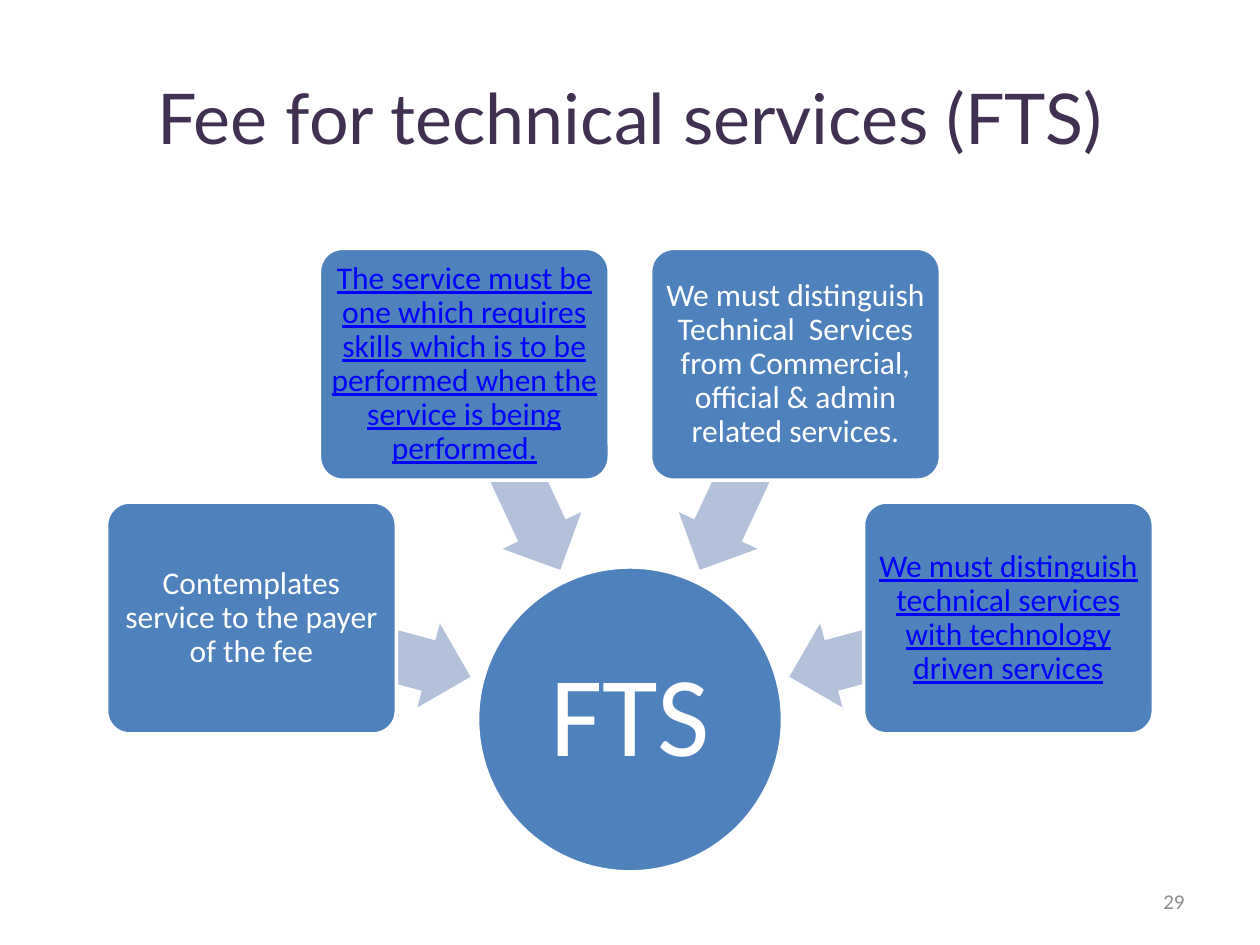
from math import cos, radians, sin

from pptx import Presentation
from pptx.dml.color import RGBColor
from pptx.enum.shapes import MSO_SHAPE as Shape
from pptx.enum.text import MSO_ANCHOR as Anchor, PP_ALIGN as Align
from pptx.util import Inches, Pt

TITLE = "Fee for technical services (FTS)"
HUB = "FTS"
PAGE = "29"
# Text, underlined as a reference
CARDS = [
    ("Contemplates service to the payer of the fee", False),
    ("The service must be one which requires skills which is to be performed "
     "when the service is being performed.", True),
    ("We must distinguish Technical  Services from Commercial, official & admin "
     "related services.", False),
    ("We must distinguish technical services with technology driven services", True),
]
COLORS = {"title": "403152", "blue": "4F81BD", "arrow": "B3C1DB",
          "white": "FFFFFF", "ref": "0000FF", "page": "8C8C8C"}

# Radial layout, in inches and degrees
MID = (5, 5.71)
START, STEP = 195, 50
CARD_R, ARROW_R = 3.11, 2.21
HUB_SIZE, CARD_SIZE, ARROW_SIZE = (2.42, 2.42), (2.3, 1.84), (1.8, 0.69)


def color(key):
    return RGBColor.from_string(COLORS[key])


def write(shape, text, size, key, font="Calibri", align=Align.CENTER, inset=None):
    frame = shape.text_frame
    frame.word_wrap = True
    frame.vertical_anchor = Anchor.MIDDLE
    if inset is not None:
        frame.margin_left = frame.margin_right = Inches(inset)
        frame.margin_top = frame.margin_bottom = Inches(inset)
    para = frame.paragraphs[0]
    para.text = text
    para.alignment = align
    para.font.name = font
    para.font.size = Pt(size)
    para.font.color.rgb = color(key)
    return para


def place(kind, size, radius, angle, fill):
    """Add a shape centred at a polar position around the hub."""
    turn = radians(angle)
    x = MID[0] + radius * cos(turn) - size[0] / 2
    y = MID[1] + radius * sin(turn) - size[1] / 2
    shape = slide.shapes.add_shape(kind, *map(Inches, (x, y, *size)))
    shape.shadow.inherit = False
    shape.fill.solid()
    shape.fill.fore_color.rgb = color(fill)
    shape.line.fill.background()
    return shape


def outline(shape):
    shape.line.color.rgb = color("white")
    shape.line.width = Pt(2)


deck = Presentation()
deck.slide_width, deck.slide_height = Inches(10), Inches(7.5)
slide = deck.slides.add_slide(deck.slide_layouts[6])

# Title
box = slide.shapes.add_textbox(*map(Inches, (0.5, 0.3, 9, 1.25)))
write(box, TITLE, 40, "title", font="Lato")

# Hub
hub = place(Shape.OVAL, HUB_SIZE, 0, 0, "blue")
outline(hub)
write(hub, HUB, 65, "white", inset=0.05).line_spacing = 0.9

# Arrows and cards around the hub
for i, (text, ref) in enumerate(CARDS):
    angle = START + i * STEP
    arrow = place(Shape.LEFT_ARROW, ARROW_SIZE, ARROW_R, angle, "arrow")
    arrow.rotation = angle
    arrow.adjustments[0] = 0.6
    arrow.adjustments[1] = 0.5

    card = place(Shape.ROUNDED_RECTANGLE, CARD_SIZE, CARD_R, angle, "blue")
    card.adjustments[0] = 0.1
    outline(card)
    para = write(card, text, 18, "ref" if ref else "white", inset=0.04)
    para.line_spacing = 0.9
    if ref:
        para.font.underline = True

# Page number
box = slide.shapes.add_textbox(*map(Inches, (7.17, 6.95, 2.33, 0.4)))
write(box, PAGE, 12, "page", align=Align.RIGHT)

deck.save("out.pptx")
